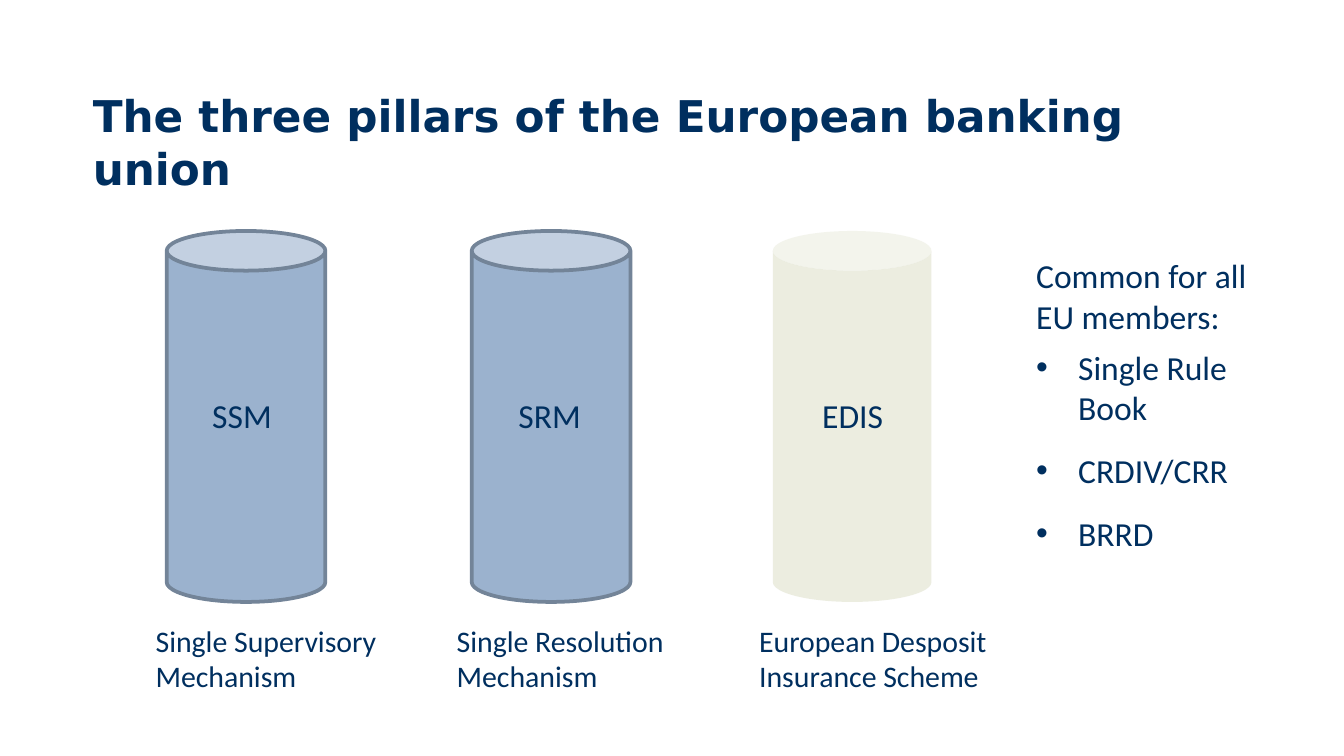
from dataclasses import dataclass
from typing import Optional

import pptx
import pptx.dml.color
import pptx.enum.shapes
import pptx.enum.text
import pptx.oxml
import pptx.oxml.ns
import pptx.util

Pt = pptx.util.Pt
qn = pptx.oxml.ns.qn

COLORS = {"navy": "002F5F", "blue": "9BB2CE", "edge": "738498", "cream": "DADCC3"}
BODY_FONT = "Calibri"
TITLE_FONT = "DejaVu Sans"

PILLAR_TOP, PILLAR_WIDTH, PILLAR_HEIGHT = 123.8, 85, 198.7
LABEL_TOP, LABEL_HEIGHT = 208, 29
CAPTION_TOP, CAPTION_HEIGHT = 329.8, 46
BULLET_INDENT = 22.5


@dataclass(frozen=True)
class Pillar:
    """Left edges and widths in points; an opacity marks a pillar without outline."""
    left: float
    label: str
    label_left: float
    label_width: float
    caption: str
    caption_left: float
    caption_width: float
    fill: str = "blue"
    opacity: Optional[int] = None


PILLARS = (
    Pillar(89.3, "SSM", 106.6, 51, "Single Supervisory Mechanism", 76.3, 149),
    Pillar(252.7, "SRM", 270.7, 48.2, "Single Resolution Mechanism", 237.6, 130.3),
    Pillar(414, "EDIS", 433.4, 51, "European Desposit Insurance Scheme", 399.6, 147.6,
           fill="cream", opacity=50),
)
RULES = ("Single Rule Book", "CRDIV/CRR", "BRRD")


def rgb(name: str) -> pptx.dml.color.RGBColor:
    return pptx.dml.color.RGBColor.from_string(COLORS[name])


def write(para, text: str, *, size: float = 18, font: str = BODY_FONT,
          bold: bool = False) -> None:
    span = para.add_run()
    span.text = text
    span.font.name = font
    span.font.size = Pt(size)
    span.font.bold = bold
    span.font.color.rgb = rgb("navy")


def add_text(page, text: str, left: float, top: float, width: float, height: float,
             *, size: float = 18):
    box = page.shapes.add_textbox(Pt(left), Pt(top), Pt(width), Pt(height))
    frame = box.text_frame
    frame.word_wrap = True
    frame.auto_size = pptx.enum.text.MSO_AUTO_SIZE.SHAPE_TO_FIT_TEXT
    write(frame.paragraphs[0], text, size=size)
    return box


def add_bullet(box, text: str) -> None:
    para = box.text_frame.add_paragraph()
    para.space_before = para.space_after = Pt(6)
    properties = para._p.get_or_add_pPr()
    properties.set("marL", str(Pt(BULLET_INDENT)))
    properties.set("indent", str(-Pt(BULLET_INDENT)))
    for tag, key, value in (("a:buFont", "typeface", "Arial"), ("a:buChar", "char", "•")):
        pptx.oxml.ns.qn(tag)
        child = properties.makeelement(qn(tag), {key: value})
        properties.append(child)
    write(para, text)


def add_can(page, pillar: Pillar) -> None:
    can = page.shapes.add_shape(
        pptx.enum.shapes.MSO_SHAPE.CAN, Pt(pillar.left), Pt(PILLAR_TOP),
        Pt(PILLAR_WIDTH), Pt(PILLAR_HEIGHT))
    can.shadow.inherit = False
    can.fill.solid()
    can.fill.fore_color.rgb = rgb(pillar.fill)
    if pillar.opacity is None:
        can.line.color.rgb = rgb("edge")
        can.line.width = Pt(2)
        return
    can.line.fill.background()
    color = can._element.spPr.find(qn("a:solidFill")).find(qn("a:srgbClr"))
    alpha = color.makeelement(qn("a:alpha"), {"val": str(pillar.opacity * 1000)})
    color.append(alpha)


def set_title(page, text: str) -> None:
    title = page.shapes.title
    title.left, title.top, title.width, title.height = Pt(42.5), Pt(41.8), Pt(646.5), Pt(46.8)
    frame = title.text_frame
    frame.word_wrap = True
    frame.auto_size = pptx.enum.text.MSO_AUTO_SIZE.NONE
    frame.vertical_anchor = pptx.enum.text.MSO_ANCHOR.TOP
    frame.margin_left, frame.margin_right, frame.margin_top = Pt(7.2), Pt(12), Pt(6)
    para = frame.paragraphs[0]
    para.alignment = pptx.enum.text.PP_ALIGN.LEFT
    write(para, text, size=23.4, font=TITLE_FONT, bold=True)


def main() -> None:
    deck = pptx.Presentation()
    deck.slide_width, deck.slide_height = Pt(720), Pt(405)
    page = deck.slides.add_slide(deck.slide_layouts.get_by_name("Title Only"))
    set_title(page, "The three pillars of the European banking union")
    for pillar in PILLARS:
        add_can(page, pillar)
        add_text(page, pillar.label, pillar.label_left, LABEL_TOP,
                 pillar.label_width, LABEL_HEIGHT)
        add_text(page, pillar.caption, pillar.caption_left, CAPTION_TOP,
                 pillar.caption_width, CAPTION_HEIGHT, size=16)
    rule_box = add_text(page, "Common for all EU members:", 548, 133.2, 130.3, 168.5)
    for rule in RULES:
        add_bullet(rule_box, rule)
    deck.save("out.pptx")


if __name__ == "__main__":
    main()
